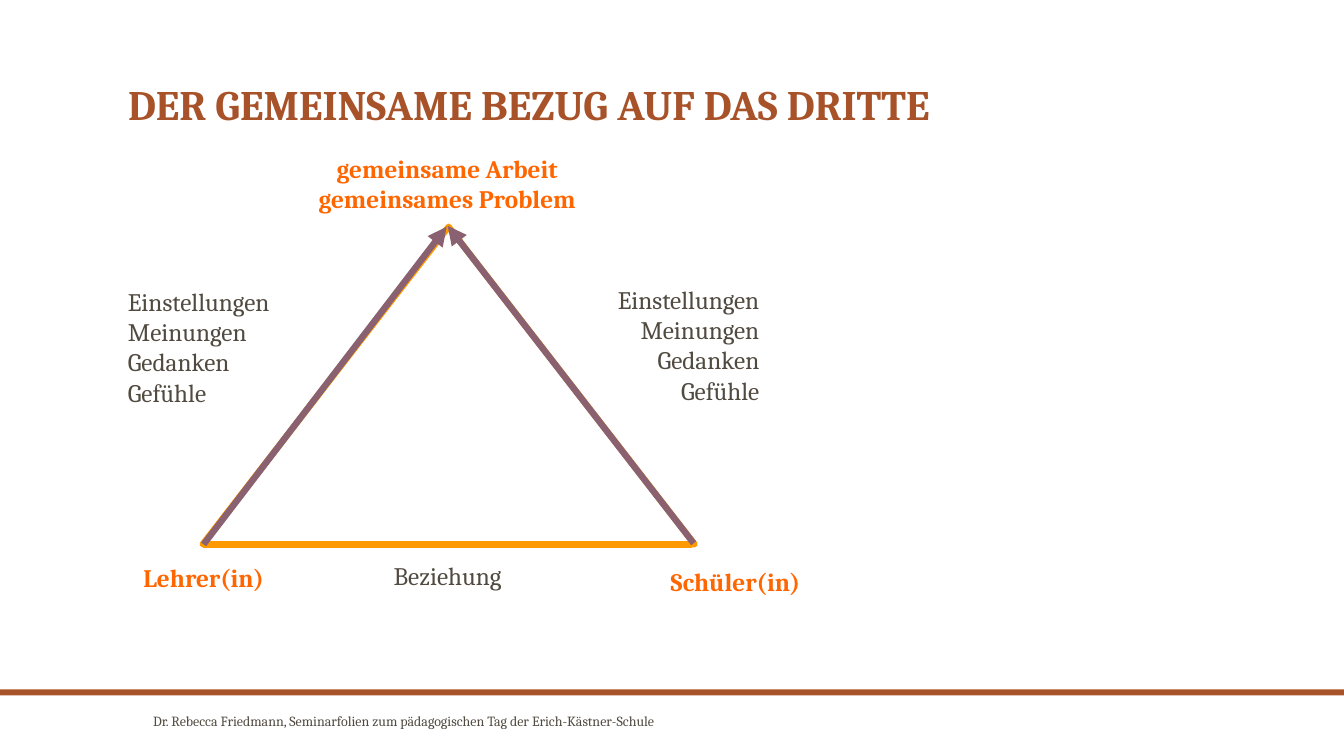
from dataclasses import dataclass

from lxml.etree import SubElement
from pptx import Presentation
from pptx.dml.color import RGBColor
from pptx.enum.shapes import MSO_CONNECTOR as Connector, MSO_SHAPE as Shape
from pptx.enum.text import MSO_ANCHOR as Anchor, MSO_AUTO_SIZE as AutoSize, PP_ALIGN as Align
from pptx.oxml.ns import qn
from pptx.util import Emu, Pt

PX = 9144  # 100 px to the inch


@dataclass(frozen=True)
class Theme:
    font: str = "Cambria"
    brown: str = "A85229"
    orange: str = "FF6600"
    amber: str = "FF9900"
    mauve: str = "896170"
    ink: str = "514A40"
    title_size: int = 30
    label_size: int = 18
    footer_size: int = 10


@dataclass(frozen=True)
class Box:
    left: int
    top: int
    width: int
    height: int

    def inner(self, left, top, width, height):
        return Box(self.left + left, self.top + top, width, height)

    def emu(self):
        return [Emu(value * PX) for value in (self.left, self.top, self.width, self.height)]


THEME = Theme()


def color(code):
    return RGBColor.from_string(code)


def write(shape, text, size, code, bold=False, align=Align.LEFT, anchor=Anchor.TOP):
    frame = shape.text_frame
    frame.text = text
    frame.word_wrap = True
    frame.auto_size = AutoSize.NONE
    frame.vertical_anchor = anchor
    for paragraph in frame.paragraphs:
        paragraph.alignment = align
        for run in paragraph.runs:
            font = run.font
            font.name, font.size, font.bold = THEME.font, Pt(size), bold
            font.color.rgb = color(code)


def add_label(slide, box, text, code=THEME.ink, bold=False, align=Align.CENTER):
    write(slide.shapes.add_textbox(*box.emu()), text, THEME.label_size, code, bold, align)


def add_line(slide, box, start, end, code, width, arrow=False):
    points = [Emu(value * PX) for x, y in (start, end) for value in (box.left + x, box.top + y)]
    line = slide.shapes.add_connector(Connector.STRAIGHT, *points)
    line.line.color.rgb = color(code)
    line.line.width = Pt(width)
    if arrow:
        SubElement(line.line._get_or_add_ln(), qn("a:tailEnd"), type="triangle")
    SubElement(line._element.spPr, qn("a:effectLst"))


def build_title(slide, box):
    title = slide.shapes.title
    title.left, title.top, title.width, title.height = box.emu()
    write(title, "DER GEMEINSAME BEZUG AUF DAS DRITTE", THEME.title_size, THEME.brown,
          bold=True, anchor=Anchor.BOTTOM)
    title.text_frame.paragraphs[0].line_spacing = 0.9


def build_diagram(slide, box):
    # Triangle with its base line
    triangle = slide.shapes.add_shape(Shape.ISOSCELES_TRIANGLE, *box.inner(128, 78, 488, 315).emu())
    triangle.shadow.inherit = False
    triangle.fill.background()
    triangle.line.color.rgb = color(THEME.amber)
    triangle.line.width = Pt(4.5)
    add_line(slide, box, (128, 395), (613, 395), THEME.amber, 3)

    # Arrows from both people up to the shared subject
    for start, end in (((129, 393), (370, 78)), ((615, 392), (371, 77))):
        add_line(slide, box, start, end, THEME.mauve, 4.5, arrow=True)

    # Corner labels
    for text, place in (
        ("gemeinsame Arbeit\ngemeinsames Problem", (213, 0, 315, 71)),
        ("Lehrer(in)", (0, 406, 258, 40)),
        ("Schüler(in)", (499, 410, 315, 40)),
    ):
        add_label(slide, box.inner(*place), text, THEME.orange, bold=True)

    # Side labels
    attitudes = "Einstellungen\nMeinungen\nGedanken\nGefühle"
    add_label(slide, box.inner(44, 132, 225, 131), attitudes, align=Align.LEFT)
    add_label(slide, box.inner(465, 130, 225, 131), attitudes, align=Align.RIGHT)
    add_label(slide, box.inner(259, 404, 224, 40), "Beziehung")


def build_footer(slide, box):
    # Rule across the slide
    rule = slide.shapes.add_shape(Shape.RECTANGLE, *box.inner(0, 0, box.width, 6).emu())
    rule.shadow.inherit = False
    rule.fill.solid()
    rule.fill.fore_color.rgb = color(THEME.brown)
    rule.line.fill.background()

    # Credit line
    credit = slide.shapes.add_textbox(*box.inner(142, 18, 567, 26).emu())
    write(credit, "Dr. Rebecca Friedmann, Seminarfolien zum pädagogischen Tag der Erich-Kästner-Schule",
          THEME.footer_size, THEME.ink, anchor=Anchor.MIDDLE)


def main():
    presentation = Presentation()
    presentation.slide_width, presentation.slide_height = Emu(1333 * PX), Emu(750 * PX)
    slide = presentation.slides.add_slide(presentation.slide_layouts.get_by_name("Title Only"))
    build_footer(slide, Box(0, 684, 1333, 66))
    build_title(slide, Box(117, 55, 913, 79))
    build_diagram(slide, Box(73, 147, 814, 450))
    presentation.save("out.pptx")


if __name__ == "__main__":
    main()
